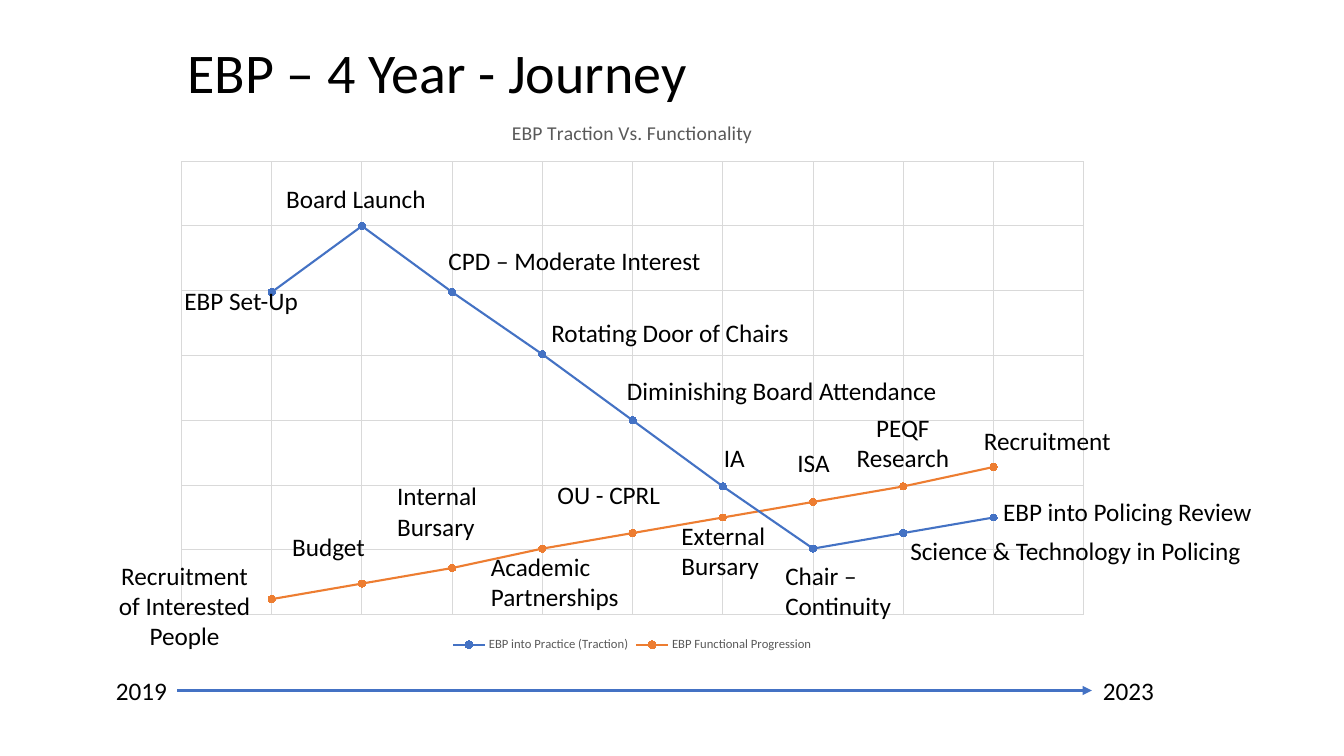
from lxml import etree
from pptx import Presentation
from pptx.chart.data import XyChartData
from pptx.dml.color import RGBColor
from pptx.enum.chart import XL_CHART_TYPE, XL_LEGEND_POSITION, XL_MARKER_STYLE
from pptx.enum.shapes import MSO_CONNECTOR
from pptx.enum.text import MSO_ANCHOR, MSO_AUTO_SIZE, PP_ALIGN
from pptx.oxml import parse_xml
from pptx.oxml.ns import nsdecls, qn
from pptx.util import Emu, Pt

SCATTER = XL_CHART_TYPE.XY_SCATTER_SMOOTH
BOTTOM = XL_LEGEND_POSITION.BOTTOM
CIRCLE = XL_MARKER_STYLE.CIRCLE
STRAIGHT = MSO_CONNECTOR.STRAIGHT
TOP = MSO_ANCHOR.TOP
FIT_SHAPE = MSO_AUTO_SIZE.SHAPE_TO_FIT_TEXT
LEFT, CENTER = PP_ALIGN.LEFT, PP_ALIGN.CENTER

PX = 9144
TITLE_ONLY = 5
GRID_STEP = 16.67
COLORS = {"text": "000000", "muted": "595959", "grid": "D9D9D9",
          "traction": "4472C4", "function": "ED7D31"}

SERIES = [
    ("EBP into Practice (Traction)", "traction", [83, 100, 83, 67, 50, 33, 17, 21, 25]),
    ("EBP Functional Progression", "function", [4, 8, 12, 17, 21, 25, 29, 33, 38]),
]
CHART_BOX = (161, 98, 932, 553)
PLOT_BOX = (180, 160, 895, 450)

LABELS = [
    ("EBP Set-Up", 173, 278, 135, LEFT),
    ("Board Launch", 274, 177, 160, LEFT),
    ("CPD – Moderate Interest", 435, 238, 273, LEFT),
    ("Rotating Door of Chairs", 537, 310, 258, LEFT),
    ("Recruitment\nof Interested\nPeople", 107, 551, 152, CENTER),
    ("Budget", 280, 522, 93, LEFT),
    ("Internal\nBursary", 384, 472, 100, LEFT),
    ("Academic\nPartnerships", 477, 542, 148, LEFT),
    ("Recruitment", 966, 417, 147, LEFT),
    ("Diminishing Board Attendance", 612, 367, 338, LEFT),
    ("External\nBursary", 666, 511, 104, LEFT),
    ("Chair –\nContinuity", 769, 551, 127, LEFT),
    ("IA", 708, 434, 41, LEFT),
    ("EBP into Policing Review", 985, 487, 269, LEFT),
    ("OU - CPRL", 543, 471, 123, LEFT),
    ("ISA", 781, 439, 52, LEFT),
    ("Science & Technology in Policing", 893, 526, 352, LEFT),
    ("PEQF\nResearch", 839, 404, 113, CENTER),
    ("2019", 105, 665, 71, LEFT),
    ("2023", 1084, 665, 71, LEFT),
]


def px(*lengths):
    """Turn lengths in px into EMU."""
    return [Emu(length * PX) for length in lengths]


def color(name):
    """Look up a named colour."""
    return RGBColor.from_string(COLORS[name])


class SlideBuilder:
    """Draws styled elements on the current slide."""

    def __init__(self, slide, font_name="Calibri"):
        """Keep the slide and its font."""
        self.slide = slide
        self.font_name = font_name

    def style(self, font, size, color_name="text"):
        """Apply the slide's font at a size and colour."""
        font.name = self.font_name
        font.size = Pt(size)
        font.bold = False
        font.color.rgb = color(color_name)

    def fill_text(self, shape, text, size, alignment):
        """Fill a shape with unwrapped text."""
        frame = shape.text_frame
        frame.text = text
        frame.word_wrap = False
        frame.auto_size = FIT_SHAPE
        frame.vertical_anchor = TOP
        for paragraph in frame.paragraphs:
            paragraph.alignment = alignment
            paragraph.line_spacing = 1.0
            self.style(paragraph.font, size)

    def title(self, text, left, top, width, height):
        """Place the slide title."""
        shape = self.slide.shapes.title
        shape.left, shape.top, shape.width, shape.height = px(left, top, width, height)
        self.fill_text(shape, text, 40, LEFT)

    def label(self, text, left, top, width, alignment):
        """Add a label as tall as its lines."""
        height = 40 + 30 * text.count("\n")
        shape = self.slide.shapes.add_textbox(*px(left, top, width, height))
        self.fill_text(shape, text, 18, alignment)

    def arrow(self, left, right, y):
        """Add a horizontal arrow pointing right."""
        connector = self.slide.shapes.add_connector(STRAIGHT, *px(left, y, right, y))
        connector.line.color.rgb = color("traction")
        connector.line.width = Pt(2.25)
        properties = connector._element.spPr
        etree.SubElement(properties.find(qn("a:ln")), qn("a:tailEnd"), type="triangle")
        etree.SubElement(properties, qn("a:effectLst"))

    def axis(self, axis, maximum, step):
        """Hide an axis but keep its grid."""
        axis.minimum_scale, axis.maximum_scale = 0, maximum
        axis.major_unit = step
        axis.has_major_gridlines = True
        axis.major_gridlines.format.line.color.rgb = color("grid")
        axis.major_gridlines.format.line.width = Pt(0.75)
        axis.visible = False

    def plot_area(self, chart):
        """Fix the inner plot area inside the chart."""
        left, top, width, height = CHART_BOX
        plot_left, plot_top, plot_width, plot_height = PLOT_BOX
        fractions = {"x": (plot_left - left) / width, "y": (plot_top - top) / height,
                     "w": plot_width / width, "h": plot_height / height}
        modes = "".join(f'<c:{key}Mode val="edge"/>' for key in "xy")
        values = "".join(f'<c:{key} val="{value:.4f}"/>' for key, value in fractions.items())
        layout = parse_xml(
            f'<c:layout {nsdecls("c")}><c:manualLayout><c:layoutTarget val="inner"/>'
            f"{modes}{values}</c:manualLayout></c:layout>")
        area = chart._chartSpace.chart.plotArea
        for existing in area.findall(qn("c:layout")):
            area.remove(existing)
        area.insert(0, layout)

    def chart(self, title, series_rows):
        """Add the smooth scatter chart."""
        data = XyChartData()
        for name, _, values in series_rows:
            series = data.add_series(name)
            for position, value in enumerate(values, 1):
                series.add_data_point(position, value)
        chart = self.slide.shapes.add_chart(SCATTER, *px(*CHART_BOX), data).chart
        self.style(chart.font, 10)
        chart.has_title = True
        chart.chart_title.include_in_layout = False
        chart.chart_title.text_frame.text = title
        self.style(chart.chart_title.text_frame.paragraphs[0].font, 14, "muted")
        chart.has_legend = True
        chart.legend.position = BOTTOM
        chart.legend.include_in_layout = False
        self.style(chart.legend.font, 9, "muted")
        self.axis(chart.category_axis, 10, 1)
        self.axis(chart.value_axis, 7 * GRID_STEP, GRID_STEP)
        self.plot_area(chart)
        plot = chart.plots[0]
        plot.vary_by_categories = False
        for series, (_, color_name, _) in zip(plot.series, series_rows):
            series.smooth = True
            series.format.line.color.rgb = color(color_name)
            series.format.line.width = Pt(1.5)
            series.marker.style = CIRCLE
            series.marker.size = 5
            series.marker.format.fill.solid()
            series.marker.format.fill.fore_color.rgb = color(color_name)
            series.marker.format.line.color.rgb = color(color_name)


def main():
    """Build and save the presentation."""
    presentation = Presentation()
    presentation.slide_width, presentation.slide_height = px(1333, 750)
    slide = presentation.slides.add_slide(presentation.slide_layouts[TITLE_ONLY])
    builder = SlideBuilder(slide)
    builder.title("EBP – 4 Year - Journey", 176, 32, 520, 77)
    builder.chart("EBP Traction Vs. Functionality", SERIES)
    for label in LABELS:
        builder.label(*label)
    builder.arrow(176, 1083, 685)
    presentation.save("out.pptx")


if __name__ == "__main__":
    main()
